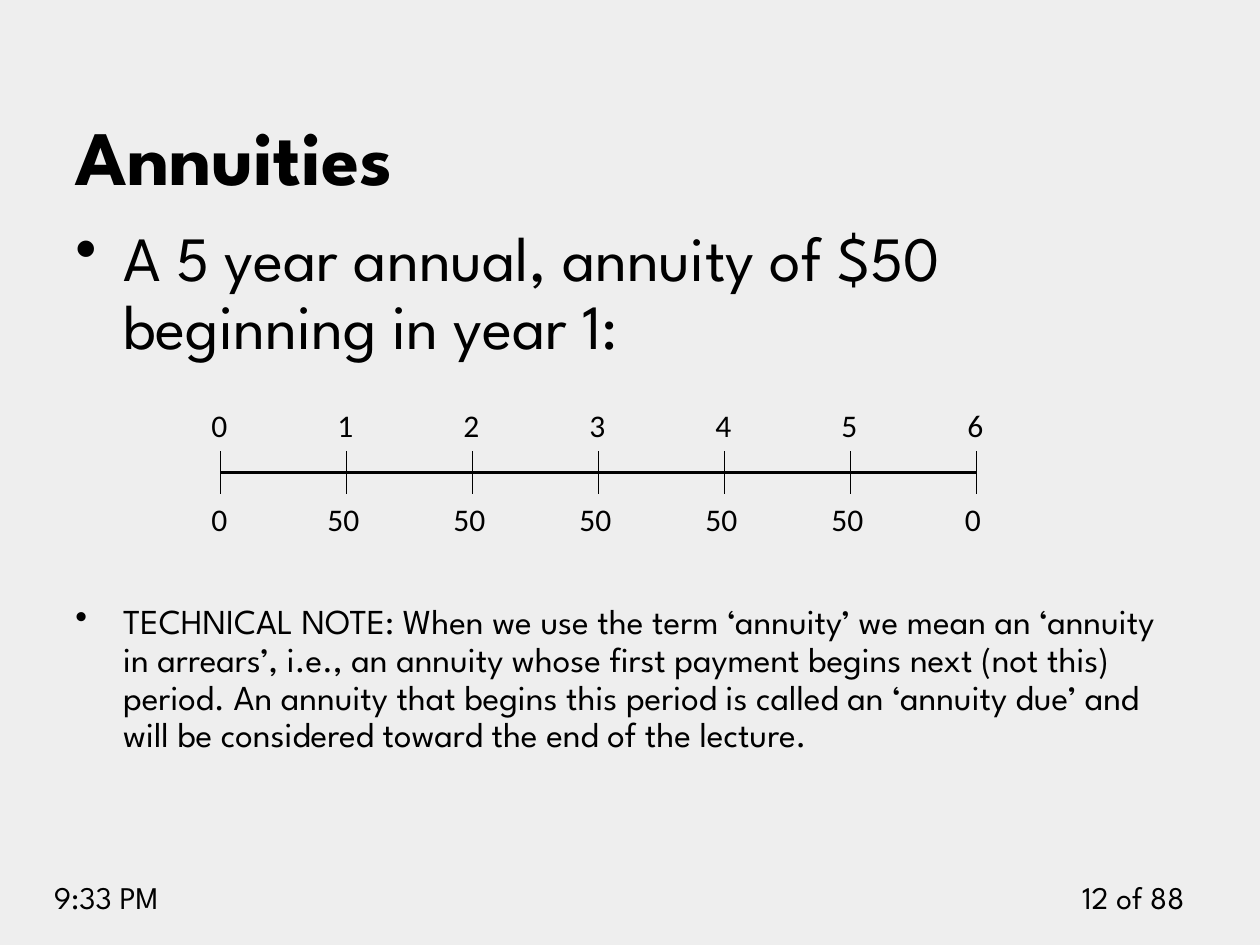
"""Build the annuities slide with its payment timeline."""
import pptx
import pptx.dml.color
import pptx.enum.shapes
import pptx.enum.text
import pptx.oxml
import pptx.oxml.ns
import pptx.util

Inches = pptx.util.Inches
Pt = pptx.util.Pt
ALIGN = pptx.enum.text.PP_ALIGN
ANCHOR = pptx.enum.text.MSO_ANCHOR
BLACK = pptx.dml.color.RGBColor(0x00, 0x00, 0x00)
PAPER = pptx.dml.color.RGBColor(0xEE, 0xEE, 0xEE)
SPARTAN = "League Spartan"
CALIBRI = "Calibri"

START = 1.75
PAYMENTS = ["0", "50", "50", "50", "50", "50", "0"]
INTRO = "A 5 year annual, annuity of $50 beginning in year 1:"
NOTE = (
    "TECHNICAL NOTE: When we use the term ‘annuity’ we mean an ‘annuity in "
    "arrears’, i.e., an annuity whose first payment begins next (not this) "
    "period. An annuity that begins this period is called an ‘annuity due’ "
    "and will be considered toward the end of the lecture."
)


def add_frame(slide, left, top, width, height, anchor=ANCHOR.TOP):
    box = slide.shapes.add_textbox(
        Inches(left), Inches(top), Inches(width), Inches(height))
    frame = box.text_frame
    frame.word_wrap = True
    frame.vertical_anchor = anchor
    return frame


def add_run(para, text, size, face=SPARTAN, bold=False):
    run = para.add_run()
    run.text = text
    font = run.font
    font.name = face
    font.size = Pt(size)
    font.bold = bold
    font.color.rgb = BLACK


def add_label(slide, text, left, top, width, face=SPARTAN, align=ALIGN.LEFT):
    para = add_frame(slide, left, top, width, 0.4).paragraphs[0]
    para.alignment = align
    add_run(para, text, 18, face)


def add_bullet(para, text, size):
    props = para._p.get_or_add_pPr()
    props.set("marL", str(Inches(0.38)))
    props.set("indent", str(Inches(-0.38)))
    mark = pptx.oxml.parse_xml(
        f'<a:buChar {pptx.oxml.ns.nsdecls("a")} char="•"/>')
    props.append(mark)
    para.line_spacing = 0.9
    add_run(para, text, size)


def add_line(slide, left, top, right, base, weight):
    line = slide.shapes.add_connector(
        pptx.enum.shapes.MSO_CONNECTOR.STRAIGHT,
        Inches(left), Inches(top), Inches(right), Inches(base))
    line.line.color.rgb = BLACK
    line.line.width = Pt(weight)
    line._element.spPr.append(pptx.oxml.parse_xml(
        f'<a:effectLst {pptx.oxml.ns.nsdecls("a")}/>'))


def add_body(slide):
    frame = add_frame(slide, 0.5, 1.75, 9, 4.95)
    add_bullet(frame.paragraphs[0], INTRO, 36)
    note = frame.add_paragraph()
    add_bullet(note, NOTE, 20)
    note.space_before = Pt(138)


def add_timeline(slide):
    last = len(PAYMENTS) - 1
    add_line(slide, START, 3.75, START + last, 3.75, 2.25)
    shifts = {0: -0.17, last: -0.19}
    for year, amount in enumerate(PAYMENTS):
        spot = START + year
        add_line(slide, spot, 3.58, spot, 3.92, 1)
        add_label(slide, str(year), spot - 0.17, 3.17, 0.34, CALIBRI)
        left = spot + shifts.get(year, -0.25)
        add_label(slide, amount, left, 3.92, 0.58, CALIBRI)


def main():
    deck = pptx.Presentation()
    deck.slide_width = Inches(10)
    deck.slide_height = Inches(7.5)
    slide = deck.slides.add_slide(deck.slide_layouts[6])
    fill = slide.background.fill
    fill.solid()
    fill.fore_color.rgb = PAPER
    add_label(slide, "12 of 88", 8.33, 6.92, 1.17, align=ALIGN.RIGHT)
    add_label(slide, "9:33 PM", 0.33, 6.92, 1.58)
    title = add_frame(slide, 0.5, 0.39, 9, 1.25, ANCHOR.BOTTOM)
    add_run(title.paragraphs[0], "Annuities", 44, bold=True)
    add_body(slide)
    add_timeline(slide)
    deck.save("out.pptx")


if __name__ == "__main__":
    main()
